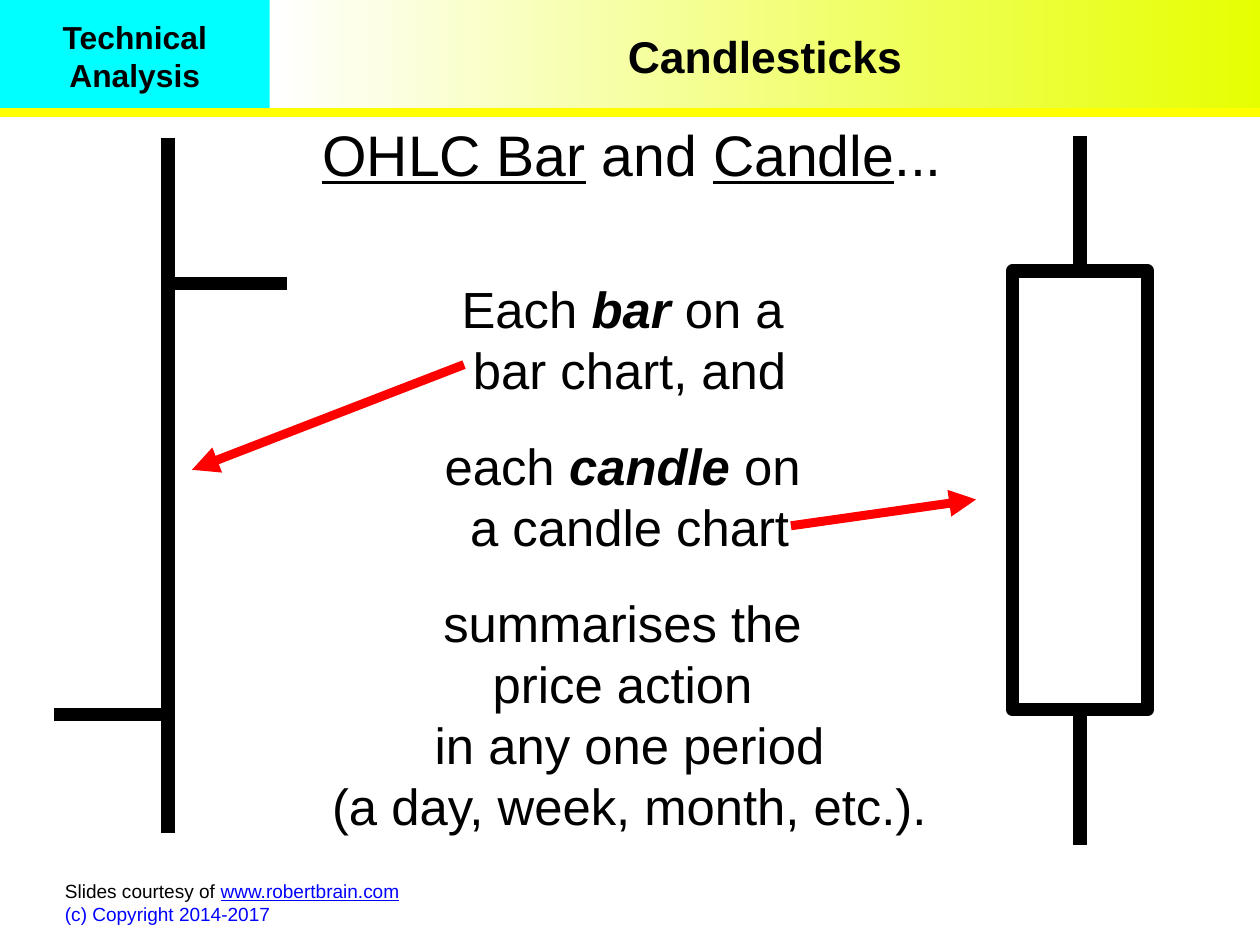
from pptx import Presentation
from pptx.dml.color import RGBColor
from pptx.enum.shapes import MSO_CONNECTOR as Connector, MSO_SHAPE as Shape
from pptx.enum.text import MSO_ANCHOR as Anchor, PP_ALIGN as Align
from pptx.oxml.ns import qn
from pptx.util import Inches, Pt
from lxml.etree import SubElement

BLACK = RGBColor(0, 0, 0)
BLUE = RGBColor(0, 0, 255)
CYAN = RGBColor(0, 255, 255)
LIME = RGBColor(0xE6, 255, 0)
RED = RGBColor(255, 0, 0)
WHITE = RGBColor(255, 255, 255)
YELLOW = RGBColor(255, 255, 0)

CM_PER_INCH = 2.54
PAGE_WIDTH, PAGE_HEIGHT = 28 / CM_PER_INCH, 21 / CM_PER_INCH
HEADER_HEIGHT, TOPIC_WIDTH = 0.98, 2.36
BAR_X, CANDLE_X = 1.47, 9.45
CANDLE_WIDTH, CANDLE_TOP, CANDLE_BOTTOM, WICK = 1.18, 2.37, 6.21, 1.18
THICK, MEDIUM = 8.5, 5.67

BOLD = {"bold": True}
STRONG = {"bold": True, "italic": True}
UNDERLINED = {"underline": True}
PLAIN = {}


def write(frame, paragraphs, size, align=Align.CENTER, anchor=Anchor.MIDDLE,
          margins=(0.1, 0.05, 0.05), gap=0, wrap=True):
    """Each paragraph is a list of (text, format) spans; a newline breaks the line.

    Margins are given as side, top, bottom.
    """
    side, top, bottom = (Inches(margin) for margin in margins)
    layout = {"word_wrap": wrap, "vertical_anchor": anchor, "margin_left": side,
              "margin_right": side, "margin_top": top, "margin_bottom": bottom}
    for name, value in layout.items():
        setattr(frame, name, value)
    for index, spans in enumerate(paragraphs):
        para = frame.add_paragraph() if index else frame.paragraphs[0]
        para.alignment = align
        para.space_before = Pt(gap if index else 0)
        for text, style in spans:
            for number, line in enumerate(text.split("\n")):
                if number:
                    para.add_line_break()
                if line:
                    add_span(para, line, size, style)


def add_span(para, text, size, style):
    span = para.add_run()
    span.text = text
    style = {"name": "Arial", "size": Pt(size), "color": BLACK, **style}
    span.font.color.rgb = style.pop("color")
    for name, value in style.items():
        setattr(span.font, name, value)


def add_text(page, left, top, width, height, paragraphs, size, **options):
    box = page.shapes.add_textbox(*map(Inches, (left, top, width, height)))
    write(box.text_frame, paragraphs, size, **options)


def add_rectangle(page, left, top, width, height):
    box = page.shapes.add_shape(Shape.RECTANGLE,
                                *map(Inches, (left, top, width, height)))
    box.shadow.inherit = False
    return box


def add_line(page, start, end, color=BLACK, weight=THICK, arrow=False):
    line = page.shapes.add_connector(Connector.STRAIGHT,
                                     *map(Inches, (*start, *end)))
    line.line.color.rgb = color
    line.line.width = Pt(weight)
    if arrow:
        SubElement(line.line._get_or_add_ln(), qn("a:tailEnd"), type="triangle")
    SubElement(line._element.spPr, qn("a:effectLst"))


def add_header(page):
    topic = add_rectangle(page, 0, 0, TOPIC_WIDTH, HEADER_HEIGHT)
    topic.fill.solid()
    topic.fill.fore_color.rgb = CYAN
    title = add_rectangle(page, TOPIC_WIDTH, 0, PAGE_WIDTH - TOPIC_WIDTH, HEADER_HEIGHT)
    title.fill.gradient()
    title.fill.gradient_angle = 0
    for stop, color in zip(title.fill.gradient_stops, (WHITE, LIME)):
        stop.color.rgb = color
    for box, text, size in ((topic, "Technical\nAnalysis", 20),
                            (title, "Candlesticks", 28)):
        box.line.fill.background()
        write(box.text_frame, [[(text, BOLD)]], size)
    add_line(page, (0, HEADER_HEIGHT), (PAGE_WIDTH, HEADER_HEIGHT), YELLOW, MEDIUM)


def add_footer(page):
    add_text(page, 0.47, 7.66, 3.5, 0.47, [
        [("Slides courtesy of ", PLAIN),
         ("www.robertbrain.com", {"color": BLUE, "underline": True}),
         (" ", PLAIN)],
        [("(c) Copyright 2014-2017", {"color": BLUE})],
    ], 12, align=Align.LEFT, wrap=False)


def add_explanation(page):
    add_text(page, 0.59, 0.98, 9.88, 0.73, [
        [("OHLC Bar", UNDERLINED), (" and ", PLAIN),
         ("Candle", UNDERLINED), ("...", PLAIN)],
    ], 36, margins=(0, 0, 0))
    add_text(page, 0.55, 1.93, 9.92, 5.68, [
        [("Each ", PLAIN), ("bar", STRONG), (" on a \nbar chart, and", PLAIN)],
        [("each ", PLAIN), ("candle", STRONG), (" on \na candle chart", PLAIN)],
        [("summarises the \nprice action \nin any one period\n"
          "(a day, week, month, etc.).", PLAIN)],
    ], 32, anchor=Anchor.TOP, margins=(0, 0.5, 0), gap=22)


def add_ohlc_bar(page):
    add_line(page, (BAR_X, 1.21), (BAR_X, 7.29))
    for y, tick_end in ((2.48, 2.51), (6.25, 0.47)):
        add_line(page, (BAR_X, y), (tick_end, y))


def add_candle(page):
    body = add_rectangle(page, CANDLE_X - CANDLE_WIDTH / 2, CANDLE_TOP,
                         CANDLE_WIDTH, CANDLE_BOTTOM - CANDLE_TOP)
    body.fill.background()
    body.line.color.rgb = BLACK
    body.line.width = Pt(THICK)
    SubElement(body.line._get_or_add_ln(), qn("a:round"))
    for top in (CANDLE_TOP - WICK, CANDLE_BOTTOM):
        add_line(page, (CANDLE_X, top), (CANDLE_X, top + WICK))


def main():
    deck = Presentation()
    deck.slide_width = Inches(PAGE_WIDTH)
    deck.slide_height = Inches(PAGE_HEIGHT)
    page = deck.slides.add_slide(deck.slide_layouts[6])
    add_header(page)
    add_footer(page)
    add_explanation(page)
    add_ohlc_bar(page)
    add_candle(page)
    for start, end in (((4.06, 3.19), (1.68, 4.11)), ((6.92, 4.6), (8.54, 4.37))):
        add_line(page, start, end, RED, MEDIUM, arrow=True)
    deck.save("out.pptx")


if __name__ == "__main__":
    main()
